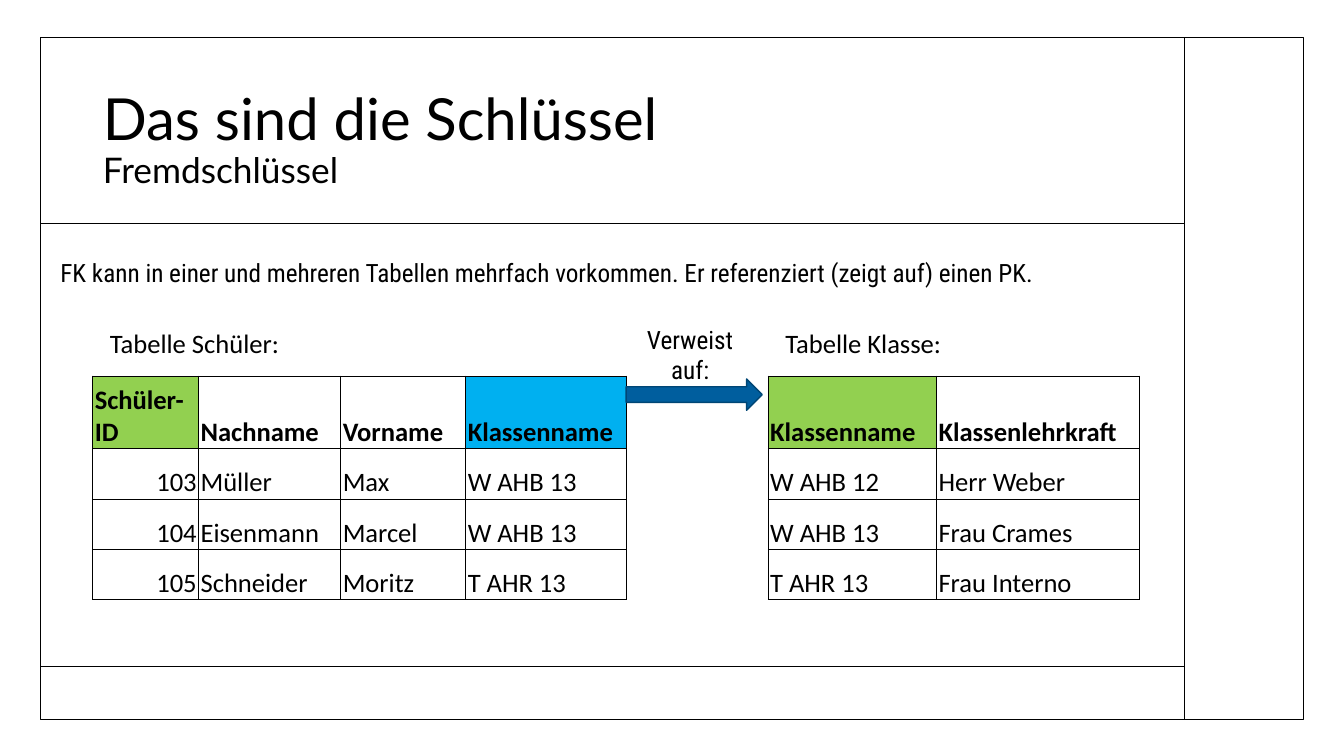
"""Build the slide on foreign keys: two linked tables inside a ruled frame."""
from lxml.etree import SubElement
from pptx import Presentation
from pptx.dml.color import RGBColor
from pptx.enum.shapes import MSO_CONNECTOR, MSO_SHAPE
from pptx.enum.text import MSO_ANCHOR, MSO_AUTO_SIZE, PP_ALIGN
from pptx.oxml.ns import qn
from pptx.util import Inches, Pt

TITLE = [("Das sind die Schlüssel", 41.4), ("Fremdschlüssel", 25.2)]
INTRO = ("FK kann in einer und mehreren Tabellen mehrfach vorkommen. "
         "Er referenziert (zeigt auf) einen PK.")
ARROW_LABEL = "Verweist auf:"
CAPTIONS = {0: "Tabelle Schüler:", 5: "Tabelle Klasse:"}
ROWS = [
    ("Schüler-ID", "Nachname", "Vorname", "Klassenname", "", "Klassenname", "Klassenlehrkraft"),
    ("103", "Müller", "Max", "W AHB 13", "", "W AHB 12", "Herr Weber"),
    ("104", "Eisenmann", "Marcel", "W AHB 13", "", "W AHB 13", "Frau Crames"),
    ("105", "Schneider", "Moritz", "T AHR 13", "", "T AHR 13", "Frau Interno"),
]
COL_WIDTHS = (1.05, 1.41, 1.24, 1.59, 1.41, 1.67, 2.01)
ROW_HEIGHTS = (0.56, 0.72, 0.5, 0.5, 0.5)
GAP_COL = 4

BLACK = RGBColor(0x00, 0x00, 0x00)
GREEN = RGBColor(0x92, 0xD0, 0x50)
BLUE = RGBColor(0x00, 0xB0, 0xF0)
ARROW_FILL = RGBColor(0x00, 0x5E, 0x9E)
ARROW_LINE = RGBColor(0x00, 0x46, 0x75)
KEY_FILLS = {0: GREEN, 3: BLUE, 5: GREEN}
NO_STYLE = "{2D5ABB26-0587-4C30-8999-92F81FD0307C}"

LEFT, TOP, WIDTH, HEIGHT = 0.4, 0.37, 12.53, 6.77
SIDE_X = 11.75
RULES = [
    (LEFT, 2.22, SIDE_X, 2.22),
    (LEFT, 6.61, SIDE_X, 6.61),
    (SIDE_X, TOP, SIDE_X, TOP + HEIGHT),
]
TABLE_X, TABLE_Y, CONTENT_W = 0.92, 3.17, 10.38
ARROW_X = TABLE_X + sum(COL_WIDTHS[:GAP_COL])


def box(*lengths):
    return [Inches(v) for v in lengths]


def style(r, size, font, bold=False):
    r.font.size, r.font.name, r.font.bold = Pt(size), font, bold
    r.font.color.rgb = BLACK


def add_title(slide):
    sp = slide.shapes.title
    sp.left, sp.top, sp.width, sp.height = box(TABLE_X, 0.89, CONTENT_W, 1.02)
    tf = sp.text_frame
    tf.auto_size, tf.vertical_anchor = MSO_AUTO_SIZE.NONE, MSO_ANCHOR.MIDDLE
    p = tf.paragraphs[0]
    p.alignment, p.line_spacing = PP_ALIGN.LEFT, 0.9
    for i, (text, size) in enumerate(TITLE):
        if i:
            p.add_line_break()
        r = p.add_run()
        r.text = text
        style(r, size, "Lato")


def add_frame(slide):
    sp = slide.shapes.add_shape(MSO_SHAPE.RECTANGLE, *box(LEFT, TOP, WIDTH, HEIGHT))
    sp.shadow.inherit = False
    sp.fill.background()
    sp.line.color.rgb, sp.line.width = BLACK, Pt(1)
    for rule in RULES:
        cn = slide.shapes.add_connector(MSO_CONNECTOR.STRAIGHT, *box(*rule))
        cn.line.color.rgb, cn.line.width = BLACK, Pt(1)
        SubElement(cn.element.spPr, qn("a:effectLst"))


def add_label(slide, text, area, align):
    tf = slide.shapes.add_textbox(*box(*area)).text_frame
    tf.word_wrap = True
    tf.text = text
    p = tf.paragraphs[0]
    p.alignment = align
    style(p.runs[0], 18, "Roboto Condensed")


def set_borders(cell, sides):
    tcPr = cell._tc.get_or_add_tcPr()
    for side in "LRTB":
        ln = SubElement(tcPr, qn(f"a:ln{side}"), w=str(Pt(0.5)))
        if side in sides:
            fill = SubElement(ln, qn("a:solidFill"))
            SubElement(fill, qn("a:srgbClr"), val=str(BLACK))
        else:
            SubElement(ln, qn("a:noFill"))


def set_margins(cell, left, top, right, bottom):
    cell.margin_left, cell.margin_top, cell.margin_right, cell.margin_bottom = box(
        left, top, right, bottom)


def fill_cell(cell, row, col, text):
    gap = col == GAP_COL
    if row == 0:
        set_borders(cell, "" if gap else "B")
        set_margins(cell, 0.17, 0.09, 0.17, 0.09)
    else:
        set_borders(cell, "LR" if gap else "LRTB")
        set_margins(cell, 0.02, 0.02, 0.02, 0)
        cell.vertical_anchor = MSO_ANCHOR.BOTTOM
    if row == 1 and col in KEY_FILLS:
        cell.fill.solid()
        cell.fill.fore_color.rgb = KEY_FILLS[col]
    else:
        cell.fill.background()
    cell.text = text
    p = cell.text_frame.paragraphs[0]
    p.alignment = PP_ALIGN.RIGHT if row > 1 and col == 0 else PP_ALIGN.LEFT
    for r in p.runs:
        style(r, 19, "Calibri", bold=row == 1)


def add_tables(slide):
    frame = slide.shapes.add_table(
        len(ROW_HEIGHTS), len(COL_WIDTHS),
        *box(TABLE_X, TABLE_Y, sum(COL_WIDTHS), sum(ROW_HEIGHTS)))
    table = frame.table
    table.first_row = table.horz_banding = False
    table._tbl.tblPr.find(qn("a:tableStyleId")).text = NO_STYLE
    for column, width in zip(table.columns, COL_WIDTHS):
        column.width = Inches(width)
    for row, height in zip(table.rows, ROW_HEIGHTS):
        row.height = Inches(height)
    captions = [CAPTIONS.get(col, "") for col in range(len(COL_WIDTHS))]
    for row, texts in enumerate([captions, *ROWS]):
        for col, text in enumerate(texts):
            fill_cell(table.cell(row, col), row, col, text)
    for col in CAPTIONS:
        table.cell(0, col).merge(table.cell(0, col + 1))


def add_arrow(slide):
    sp = slide.shapes.add_shape(MSO_SHAPE.RIGHT_ARROW, *box(ARROW_X, 3.76, 1.35, 0.31))
    sp.shadow.inherit = False
    sp.fill.solid()
    sp.fill.fore_color.rgb = ARROW_FILL
    sp.line.color.rgb, sp.line.width = ARROW_LINE, Pt(1)


def main():
    prs = Presentation()
    prs.slide_width, prs.slide_height = box(13.33, 7.5)
    slide = prs.slides.add_slide(prs.slide_layouts[5])
    add_frame(slide)
    add_title(slide)
    add_tables(slide)
    add_arrow(slide)
    add_label(slide, ARROW_LABEL, (ARROW_X, TABLE_Y, 1.27, 0.71), PP_ALIGN.CENTER)
    add_label(slide, INTRO, (0.5, 2.5, 11.25, 0.4), PP_ALIGN.LEFT)
    prs.save("out.pptx")


if __name__ == "__main__":
    main()
